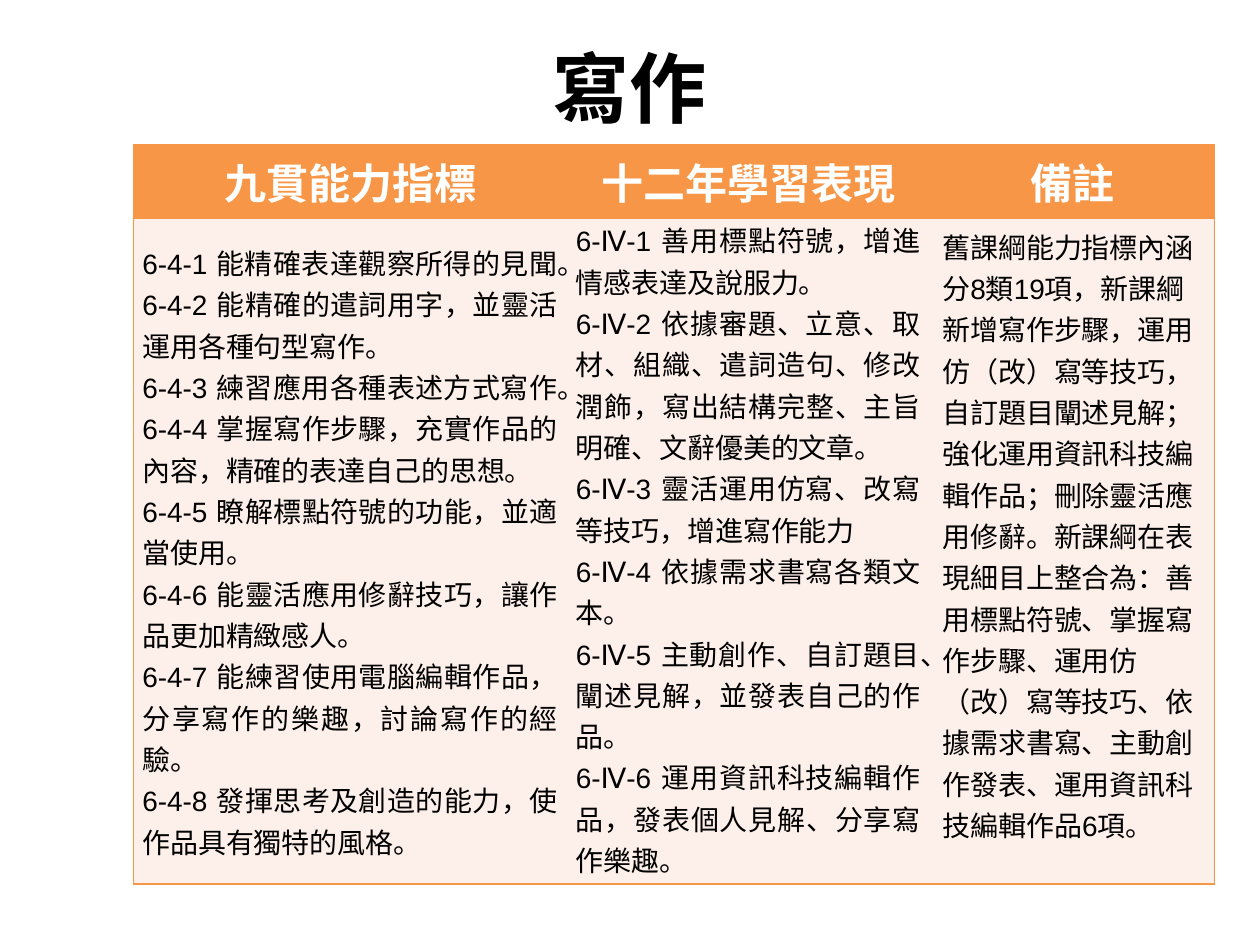
import pptx
import pptx.util
from lxml import etree
from pptx.dml.color import RGBColor
from pptx.enum.text import MSO_ANCHOR, PP_ALIGN
from pptx.oxml.ns import qn
from pptx.util import Pt

ORANGE = RGBColor(0xF7, 0x96, 0x46)
CREAM = RGBColor(0xFD, 0xEF, 0xE9)
WHITE = RGBColor(0xFF, 0xFF, 0xFF)
BLACK = RGBColor(0, 0, 0)
LATIN_FONT = "Arial"
CHINESE_FONT = "Noto Sans CJK TC"
NO_STYLE = "{2D5ABB26-0587-4C30-8999-92F81FD0307C}"

TITLE = "寫作"
OLD_INDICATORS = [
    "6-4-1 能精確表達觀察所得的見聞。",
    "6-4-2 能精確的遣詞用字，並靈活運用各種句型寫作。",
    "6-4-3 練習應用各種表述方式寫作。",
    "6-4-4 掌握寫作步驟，充實作品的內容，精確的表達自己的思想。",
    "6-4-5 瞭解標點符號的功能，並適當使用。",
    "6-4-6 能靈活應用修辭技巧，讓作品更加精緻感人。",
    "6-4-7 能練習使用電腦編輯作品，分享寫作的樂趣，討論寫作的經驗。",
    "6-4-8 發揮思考及創造的能力，使作品具有獨特的風格。",
]
NEW_PERFORMANCES = [
    "6-Ⅳ-1 善用標點符號，增進情感表達及說服力。",
    "6-Ⅳ-2 依據審題、立意、取材、組織、遣詞造句、修改潤飾，寫出結構完整、主旨明確、文辭優美的文章。",
    "6-Ⅳ-3 靈活運用仿寫、改寫等技巧，增進寫作能力",
    "6-Ⅳ-4 依據需求書寫各類文本。",
    "6-Ⅳ-5 主動創作、自訂題目、闡述見解，並發表自己的作品。",
    "6-Ⅳ-6 運用資訊科技編輯作品，發表個人見解、分享寫作樂趣。",
]
REMARKS = [
    "舊課綱能力指標內涵分8類19項，新課綱新增寫作步驟，運用仿（改）寫等技巧，"
    "自訂題目闡述見解；強化運用資訊科技編輯作品；刪除靈活應用修辭。"
    "新課綱在表現細目上整合為：善用標點符號、掌握寫作步驟、運用仿（改）寫等技巧、"
    "依據需求書寫、主動創作發表、運用資訊科技編輯作品6項。",
]
# heading, width, body paragraphs, body alignment, body anchor, tight margins
COLUMNS = [
    ("九貫能力指標", 247.7, OLD_INDICATORS, PP_ALIGN.JUSTIFY, MSO_ANCHOR.MIDDLE, True),
    ("十二年學習表現", 207.4, NEW_PERFORMANCES, PP_ALIGN.JUSTIFY, MSO_ANCHOR.TOP, True),
    ("備註", 162.7, REMARKS, PP_ALIGN.LEFT, MSO_ANCHOR.TOP, False),
]
TABLE_LEFT, TABLE_TOP = 76.3, 82.8
ROW_HEIGHTS = [33.8, 380.2]


def write(frame, lines, size, colour, bold, align, latin, spacing=None):
    frame.text = "\n".join(lines)
    for para in frame.paragraphs:
        para.alignment = align
        if spacing:
            para.line_spacing = Pt(spacing)
        font = para.font
        font.size, font.bold, font.name = Pt(size), bold, latin
        font.color.rgb = colour
        properties = para._p.pPr.find(qn("a:defRPr"))
        etree.SubElement(properties, qn("a:ea"), typeface=CHINESE_FONT)


def add_borders(cell, sides):
    """Line the given sides, in the order L, R, T, B; call before filling."""
    properties = cell._tc.get_or_add_tcPr()
    for side in sides:
        line = etree.SubElement(properties, qn(f"a:ln{side}"), w=str(Pt(1)))
        fill = etree.SubElement(line, qn("a:solidFill"))
        etree.SubElement(fill, qn("a:srgbClr"), val=str(ORANGE))


def add_comparison(page):
    width = sum(column[1] for column in COLUMNS)
    frame = page.shapes.add_table(
        len(ROW_HEIGHTS), len(COLUMNS), Pt(TABLE_LEFT), Pt(TABLE_TOP),
        Pt(width), Pt(sum(ROW_HEIGHTS)))
    table = frame.table
    table._tbl.tblPr.find(qn("a:tableStyleId")).text = NO_STYLE
    table.horz_banding = False
    for row, height in zip(table.rows, ROW_HEIGHTS):
        row.height = Pt(height)

    edges = ["LTB", "TB", "RTB"]
    for index, (heading, width, lines, align, anchor, tight) in enumerate(COLUMNS):
        table.columns[index].width = Pt(width)
        head, body = table.cell(0, index), table.cell(1, index)
        for cell, colour in ((head, ORANGE), (body, CREAM)):
            add_borders(cell, edges[index])
            cell.fill.solid()
            cell.fill.fore_color.rgb = colour
        write(head.text_frame, [heading], 24, WHITE, True, PP_ALIGN.CENTER, CHINESE_FONT)
        write(body.text_frame, lines, 16, BLACK, False, align, LATIN_FONT, 23.6)
        body.vertical_anchor = anchor
        if tight:
            body.margin_left = body.margin_right = Pt(5.04)
            body.margin_top = body.margin_bottom = Pt(0)


def main():
    deck = pptx.Presentation()
    deck.slide_width, deck.slide_height = Pt(720), Pt(540)
    page = deck.slides.add_slide(deck.slide_layouts[5])
    title = page.shapes.title
    title.left, title.top, title.width, title.height = Pt(36), Pt(4.3), Pt(648), Pt(90)
    title.text_frame.vertical_anchor = MSO_ANCHOR.MIDDLE
    write(title.text_frame, [TITLE], 44, BLACK, True, PP_ALIGN.CENTER, CHINESE_FONT)
    add_comparison(page)
    deck.save("out.pptx")


if __name__ == "__main__":
    main()
